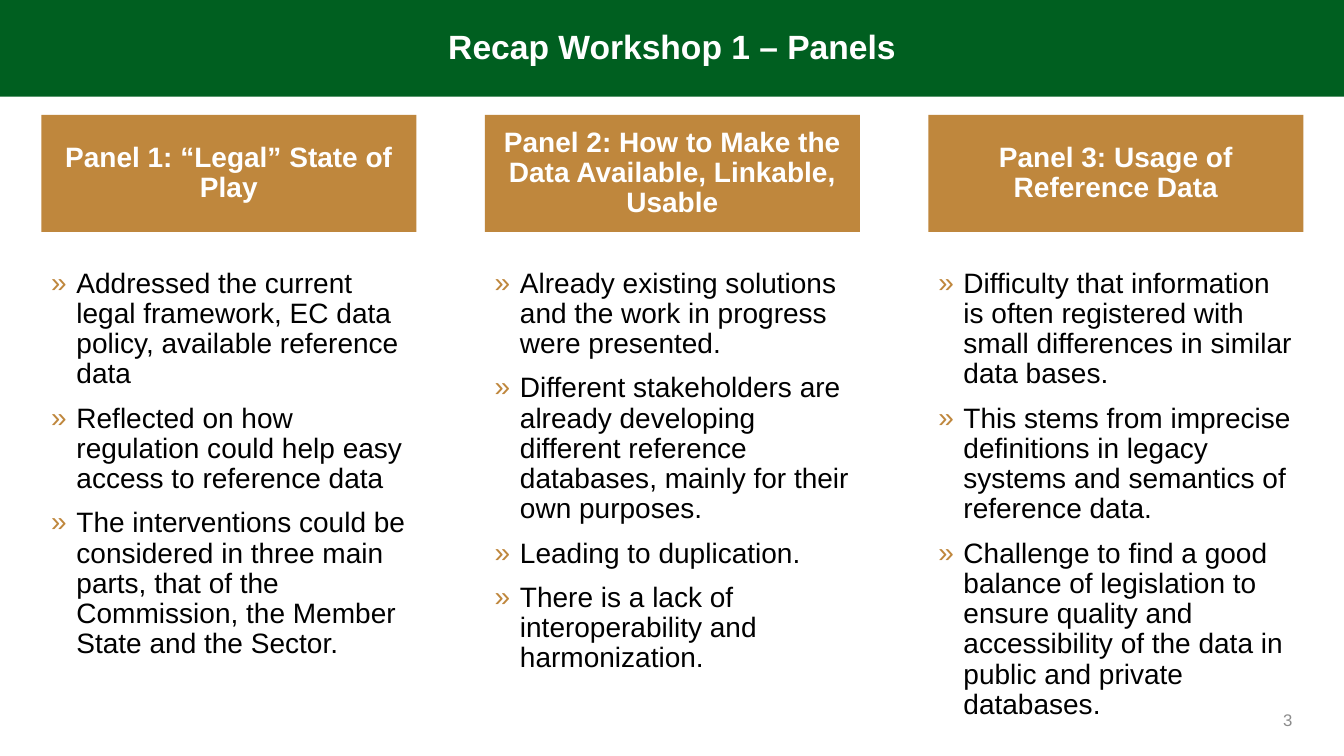
from lxml import etree
from pptx import Presentation
from pptx.dml.color import RGBColor
from pptx.enum import shapes, text
from pptx.oxml import ns
from pptx.util import Pt

COLORS = {"green": "005F20", "gold": "BF873D", "white": "FFFFFF",
          "black": "000000", "grey": "8C8C8C"}
LEFT, STEP, WIDTH = 29.52, 316.8, 267.84

PANELS = [
    ("Panel 1: “Legal” State of Play", 289.44, [
        "Addressed the current legal framework, EC data policy, available reference data",
        "Reflected on how regulation could help easy access to reference data",
        "The interventions could be considered in three main parts, that of the "
        "Commission, the Member State and the Sector."]),
    ("Panel 2: How to Make the Data Available, Linkable, Usable", 299.52, [
        "Already existing solutions and the work in progress were presented.",
        "Different stakeholders are already developing different reference databases, "
        "mainly for their own purposes.",
        "Leading to duplication.",
        "There is a lack of interoperability and harmonization."]),
    ("Panel 3: Usage of Reference Data", 332.64, [
        "Difficulty that information is often registered with small differences in "
        "similar data bases.",
        "This stems from imprecise definitions in legacy systems and semantics of "
        "reference data.",
        "Challenge to find a good balance of legislation to ensure quality and "
        "accessibility of the data in public and private databases."]),
]

prs = Presentation()
prs.slide_width, prs.slide_height = Pt(960), Pt(540)
s = prs.slides.add_slide(prs.slide_layouts[6])


def add_box(box, lines, size, color, fill=None, bold=False, bullet=False,
            align=text.PP_ALIGN.LEFT, anchor=text.MSO_ANCHOR.MIDDLE):
    """Place a text block, with a filled rectangle behind it if fill is given."""
    place = [Pt(v) for v in box]
    if fill:
        sp = s.shapes.add_shape(shapes.MSO_SHAPE.RECTANGLE, *place)
        sp.shadow.inherit = False
        sp.fill.solid()
        sp.fill.fore_color.rgb = RGBColor.from_string(COLORS[fill])
        sp.line.fill.background()
    else:
        sp = s.shapes.add_textbox(*place)
    tf = sp.text_frame
    tf.word_wrap = True
    tf.vertical_anchor = anchor
    for i, line in enumerate(lines):
        p = tf.paragraphs[0] if i == 0 else tf.add_paragraph()
        if bullet:
            add_bullet(p)
        p.alignment = align
        p.line_spacing = 0.9
        if i:
            p.space_before = Pt(10)
        r = p.add_run()
        r.text = line
        style = {"name": "Arial", "size": Pt(size), "bold": bold}
        for key, value in style.items():
            setattr(r.font, key, value)
        r.font.color.rgb = RGBColor.from_string(COLORS[color])


def add_bullet(p):
    pPr = p._p.get_or_add_pPr()
    pPr.set("marL", str(Pt(18)))
    pPr.set("indent", str(Pt(-18)))
    clr = etree.SubElement(pPr, ns.qn("a:buClr"))
    etree.SubElement(clr, ns.qn("a:srgbClr"), val=COLORS["gold"])
    etree.SubElement(pPr, ns.qn("a:buFont"), typeface="Arial")
    etree.SubElement(pPr, ns.qn("a:buChar"), char="»")


# Slide number and title bar
add_box((714.24, 500.4, 216, 28.8), ["3"], 12, "grey", align=text.PP_ALIGN.RIGHT)
add_box((0, 0, 960, 69.12), ["Recap Workshop 1 – Panels"], 24, "white",
        fill="green", bold=True, align=text.PP_ALIGN.CENTER)

# Three panels: heading above bullets
for col, (heading, height, points) in enumerate(PANELS):
    x = LEFT + col * STEP
    add_box((x, 82.08, WIDTH, 83.52), [heading], 20, "white",
            fill="gold", bold=True, align=text.PP_ALIGN.CENTER)
    add_box((x, 188.64, WIDTH, height), points, 20, "black",
            bullet=True, anchor=text.MSO_ANCHOR.TOP)

prs.save("out.pptx")
